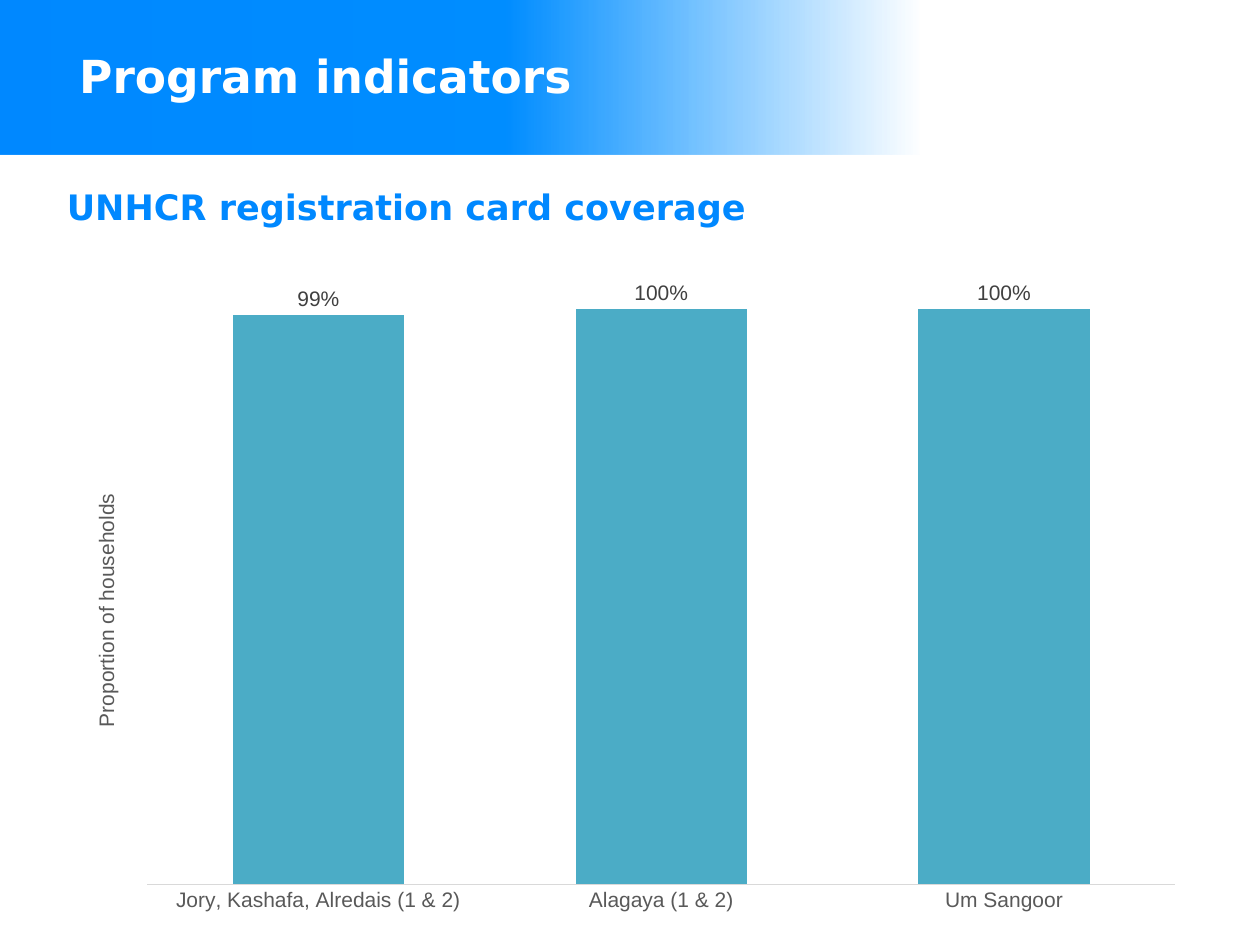
"""Build the program indicators slide with its registration card coverage chart."""
from dataclasses import dataclass

from lxml import etree
from pptx import Presentation
from pptx import util as u
from pptx.chart import data as chart_data
from pptx.dml.color import RGBColor
from pptx.enum import chart as ce
from pptx.enum import shapes, text
from pptx.oxml import parse_xml
from pptx.oxml.ns import nsdecls, qn

HEADING_FONT = "DejaVu Sans"
CHART_FONT = "Arial"
BLUE = "0088FF"
GREY = "595959"


@dataclass(frozen=True)
class Box:
    left: float
    top: float
    width: float
    height: float

    def lengths(self) -> tuple:
        return tuple(u.Inches(v) for v in (self.left, self.top, self.width, self.height))


@dataclass(frozen=True)
class Heading:
    wording: str
    box: Box
    size: int
    color: str
    anchor: text.MSO_ANCHOR
    side_inset: float = 0
    bottom_inset: float = 0


@dataclass(frozen=True)
class GradientStop:
    percent: int
    color: str
    alpha: int = 100


BANNER = Box(0, 0, 10, 1.23)
BANNER_STOPS = (
    GradientStop(0, BLUE),
    GradientStop(40, "008DFF"),
    GradientStop(73, "0091FF", 0),
)
HEADINGS = (
    Heading("UNHCR registration card coverage", Box(0.53, 1.47, 8.98, 0.46),
            20, BLUE, text.MSO_ANCHOR.TOP),
    Heading("Program indicators", Box(0.53, 0.13, 6.48, 1.01),
            26, "FFFFFF", text.MSO_ANCHOR.MIDDLE, 0.1, 0.07),
)
CHART = Box(0.53, 2.24, 8.98, 5.09)
PLOT = Box(1.17, 2.45, 8.16, 4.57)
COVERAGE = {
    "Jory, Kashafa, Alredais (1 & 2)": 0.99,
    "Alagaya (1 & 2)": 1,
    "Um Sangoor": 1,
}


def rgb(color: str) -> RGBColor:
    return RGBColor.from_string(color)


def style_font(font, name: str, size: int, color: str, bold: bool = False) -> None:
    font.name, font.size, font.bold = name, u.Pt(size), bold
    font.color.rgb = rgb(color)


def add_banner(slide) -> None:
    banner = slide.shapes.add_shape(shapes.MSO_SHAPE.RECTANGLE, *BANNER.lengths())
    banner.shadow.inherit = False
    banner.line.fill.background()
    banner.fill.gradient()
    banner.fill.gradient_angle = 0
    stop_list = banner.element.spPr.find(".//" + qn("a:gsLst"))
    for old_stop in list(stop_list):
        stop_list.remove(old_stop)
    for stop in BANNER_STOPS:
        gs = etree.SubElement(stop_list, qn("a:gs"), pos=str(stop.percent * 1000))
        color = etree.SubElement(gs, qn("a:srgbClr"), val=stop.color)
        if stop.alpha < 100:
            etree.SubElement(color, qn("a:alpha"), val=str(stop.alpha * 1000))


def add_heading(slide, heading: Heading) -> None:
    frame = slide.shapes.add_textbox(*heading.box.lengths()).text_frame
    frame.word_wrap = True
    frame.vertical_anchor = heading.anchor
    frame.margin_left = frame.margin_right = u.Inches(heading.side_inset)
    frame.margin_top = 0
    frame.margin_bottom = u.Inches(heading.bottom_inset)
    run = frame.paragraphs[0].add_run()
    run.text = heading.wording
    style_font(run.font, HEADING_FONT, heading.size, heading.color, bold=True)


def place_plot(chart, frame: Box, plot: Box) -> None:
    fractions = {
        "x": (plot.left - frame.left) / frame.width,
        "y": (plot.top - frame.top) / frame.height,
        "w": plot.width / frame.width,
        "h": plot.height / frame.height,
    }
    modes = '<c:xMode val="edge"/><c:yMode val="edge"/>'
    sizes = "".join(f'<c:{key} val="{value:.3f}"/>' for key, value in fractions.items())
    plot_area = chart.element.find(".//" + qn("c:plotArea"))
    for old_layout in plot_area.findall(qn("c:layout")):
        plot_area.remove(old_layout)
    plot_area.insert(0, parse_xml(
        f'<c:layout {nsdecls("c")}><c:manualLayout><c:layoutTarget val="inner"/>'
        f"{modes}{sizes}</c:manualLayout></c:layout>"))


def add_coverage_chart(slide) -> None:
    coverage = chart_data.CategoryChartData(number_format="0%")
    coverage.categories = list(COVERAGE)
    coverage.add_series("Series 1", list(COVERAGE.values()))
    chart = slide.shapes.add_chart(
        ce.XL_CHART_TYPE.COLUMN_CLUSTERED, *CHART.lengths(), coverage).chart
    chart.has_legend = False
    chart.has_title = False
    style_font(chart.font, CHART_FONT, 12, "000000")

    camps = chart.category_axis
    camps.major_tick_mark = ce.XL_TICK_MARK.NONE
    camps.format.line.color.rgb = rgb("D9D9D9")
    camps.format.line.width = u.Pt(0.75)
    style_font(camps.tick_labels.font, CHART_FONT, 12, GREY)

    households = chart.value_axis
    households.minimum_scale, households.maximum_scale = 0, 1
    households.major_unit = 0.25
    households.has_major_gridlines = False
    households.tick_labels.number_format = "0%"
    households.tick_labels.number_format_is_linked = False
    households.visible = False
    caption = households.axis_title.text_frame.paragraphs[0].add_run()
    caption.text = "Proportion of households"
    style_font(caption.font, CHART_FONT, 12, GREY)

    columns = chart.plots[0]
    columns.gap_width, columns.overlap = 100, -27
    columns.vary_by_categories = False
    series = columns.series[0]
    series.format.fill.solid()
    series.format.fill.fore_color.rgb = rgb("4BACC6")
    labels = series.data_labels
    labels.show_value = True
    labels.position = ce.XL_LABEL_POSITION.OUTSIDE_END
    labels.number_format = "0%"
    labels.number_format_is_linked = False
    style_font(labels.font, CHART_FONT, 12, "404040")
    place_plot(chart, CHART, PLOT)


def main() -> None:
    deck = Presentation()
    deck.slide_width, deck.slide_height = u.Inches(10), u.Inches(7.5)
    slide = deck.slides.add_slide(deck.slide_layouts[6])
    add_banner(slide)
    for heading in HEADINGS:
        add_heading(slide, heading)
    add_coverage_chart(slide)
    deck.save("out.pptx")


if __name__ == "__main__":
    main()
